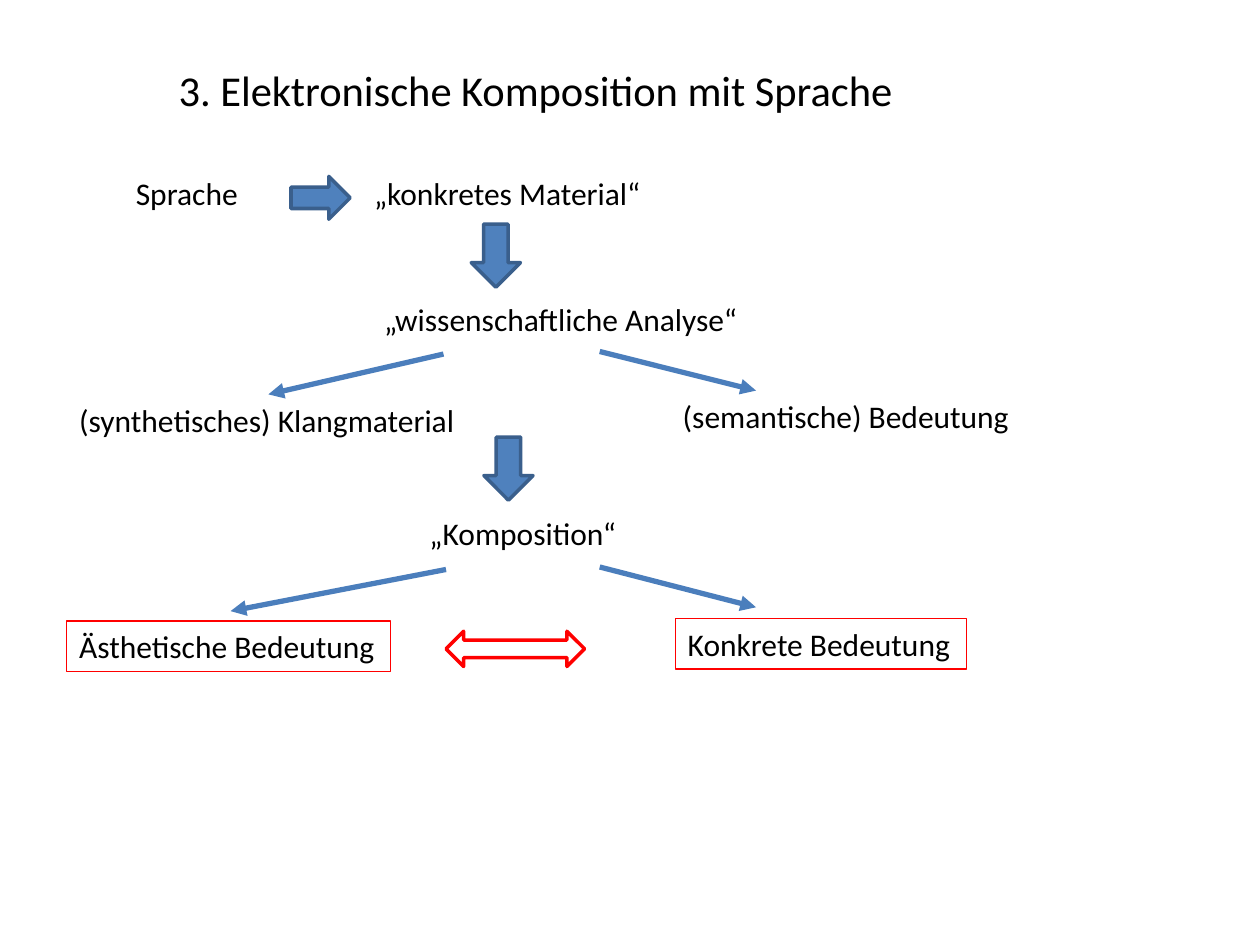
"""Build a flow slide about electronic composition with speech."""
from dataclasses import dataclass

from lxml.etree import SubElement
from pptx import Presentation
from pptx.dml.color import RGBColor
from pptx.enum.shapes import MSO_CONNECTOR as Connector, MSO_SHAPE as Preset
from pptx.enum.text import MSO_ANCHOR as Anchor, MSO_AUTO_SIZE as AutoSize, PP_ALIGN as Align
from pptx.oxml.ns import qn
from pptx.slide import Slide
from pptx.util import Emu, Pt

EMU_PER_PX = 9144


@dataclass(frozen=True)
class Theme:
    font: str = "Calibri"
    title_size: float = 24.3
    label_size: float = 18
    text: RGBColor = RGBColor(0, 0, 0)
    block_fill: RGBColor = RGBColor(0x4F, 0x81, 0xBD)
    block_line: RGBColor = RGBColor(0x3A, 0x5F, 0x8C)
    branch: RGBColor = RGBColor(0x4B, 0x7E, 0xBC)
    accent: RGBColor = RGBColor(0xFF, 0, 0)
    block_width: float = 2
    branch_width: float = 3
    frame_width: float = 0.75


@dataclass(frozen=True)
class Label:
    text: str
    left: int
    top: int
    width: int
    height: int = 40
    size: float = Theme.label_size
    align: Align = Align.LEFT
    anchor: Anchor = Anchor.TOP
    wrap: bool = True
    framed: bool = False


@dataclass(frozen=True)
class BlockArrow:
    preset: Preset
    left: int
    top: int
    width: int
    height: int
    line: RGBColor = Theme.block_line
    filled: bool = True


@dataclass(frozen=True)
class Branch:
    start_x: int
    start_y: int
    end_x: int
    end_y: int


LABELS = (
    Label("3. Elektronische Komposition mit Sprache", 106, 44, 638, 54,
          Theme.title_size, Align.CENTER, Anchor.MIDDLE),
    Label("Sprache", 98, 133, 110),
    Label("„konkretes Material“", 287, 133, 252),
    Label("„wissenschaftliche Analyse“", 295, 233, 370),
    Label("(synthetisches) Klangmaterial", 53, 313, 321, wrap=False),
    Label("(semantische) Bedeutung", 532, 310, 282, wrap=False),
    Label("„Komposition“", 322, 403, 186, align=Align.CENTER),
    Label("Ästhetische Bedeutung", 53, 493, 257, wrap=False, framed=True),
    Label("Konkrete Bedeutung", 536, 491, 231, wrap=False, framed=True),
)
BLOCK_ARROWS = (
    BlockArrow(Preset.RIGHT_ARROW, 231, 140, 47, 34),
    BlockArrow(Preset.DOWN_ARROW, 374, 178, 39, 50),
    BlockArrow(Preset.DOWN_ARROW, 384, 347, 39, 50),
    BlockArrow(Preset.LEFT_RIGHT_ARROW, 354, 501, 110, 28, Theme.accent, False),
)
BRANCHES = (
    Branch(352, 281, 213, 313),
    Branch(476, 279, 600, 310),
    Branch(354, 452, 183, 485),
    Branch(476, 450, 600, 482),
)


def px(*lengths: int) -> list[Emu]:
    return [Emu(length * EMU_PER_PX) for length in lengths]


def draw_label(slide: Slide, label: Label, theme: Theme) -> None:
    shape = slide.shapes.add_textbox(*px(label.left, label.top, label.width, label.height))
    if label.framed:
        shape.line.color.rgb = theme.accent
        shape.line.width = Pt(theme.frame_width)
    text_frame = shape.text_frame
    text_frame.text = label.text
    text_frame.word_wrap = label.wrap
    text_frame.vertical_anchor = label.anchor
    if label.size == theme.label_size:
        text_frame.auto_size = AutoSize.SHAPE_TO_FIT_TEXT
    paragraph = text_frame.paragraphs[0]
    paragraph.alignment = label.align
    font = paragraph.runs[0].font
    font.name = theme.font
    font.size = Pt(label.size)
    font.color.rgb = theme.text


def draw_block_arrow(slide: Slide, arrow: BlockArrow, theme: Theme) -> None:
    shape = slide.shapes.add_shape(
        arrow.preset, *px(arrow.left, arrow.top, arrow.width, arrow.height))
    shape.shadow.inherit = False
    if arrow.filled:
        shape.fill.solid()
        shape.fill.fore_color.rgb = theme.block_fill
    else:
        shape.fill.background()
    shape.line.color.rgb = arrow.line
    shape.line.width = Pt(theme.block_width)


def draw_branch(slide: Slide, branch: Branch, theme: Theme) -> None:
    connector = slide.shapes.add_connector(
        Connector.STRAIGHT,
        *px(branch.start_x, branch.start_y, branch.end_x, branch.end_y))
    connector.line.color.rgb = theme.branch
    connector.line.width = Pt(theme.branch_width)
    SubElement(connector.line._get_or_add_ln(), qn("a:tailEnd"), type="triangle")
    SubElement(connector._element.spPr, qn("a:effectLst"))


def main() -> None:
    theme = Theme()
    presentation = Presentation()
    presentation.slide_width, presentation.slide_height = px(1000, 750)
    slide = presentation.slides.add_slide(presentation.slide_layouts[6])
    for label in LABELS:
        draw_label(slide, label, theme)
    for arrow in BLOCK_ARROWS:
        draw_block_arrow(slide, arrow, theme)
    for branch in BRANCHES:
        draw_branch(slide, branch, theme)
    presentation.save("out.pptx")


if __name__ == "__main__":
    main()
